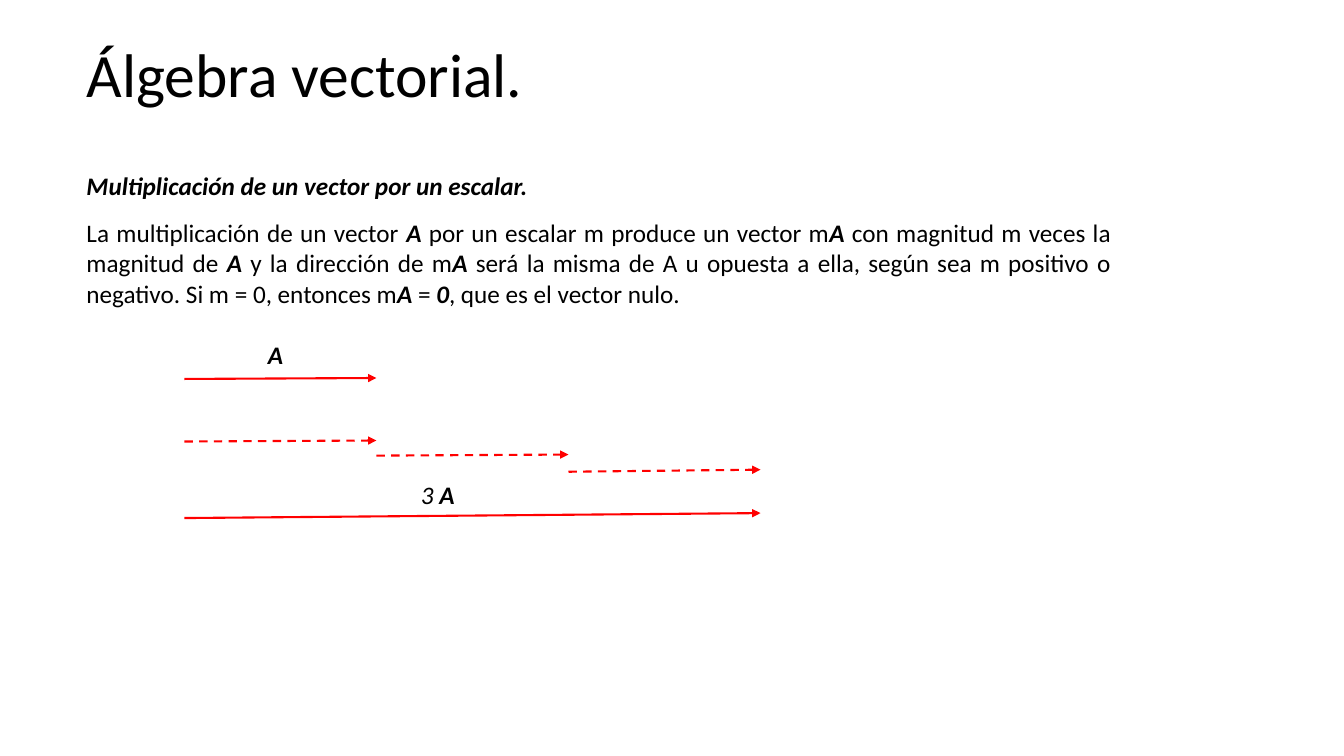
from dataclasses import dataclass
from typing import NamedTuple

from lxml.etree import SubElement
from pptx import Presentation
from pptx.dml.color import RGBColor
from pptx.enum.dml import MSO_LINE_DASH_STYLE as Dash
from pptx.enum.shapes import MSO_CONNECTOR as Connector
from pptx.enum.text import MSO_ANCHOR as Anchor, MSO_AUTO_SIZE as AutoSize, PP_ALIGN as Align
from pptx.oxml.ns import qn
from pptx.slide import Slide
from pptx.text.text import TextFrame, _Paragraph as Paragraph
from pptx.util import Emu, Inches, Pt

BLACK = RGBColor(0x00, 0x00, 0x00)
RED = RGBColor(0xFF, 0x00, 0x00)
WIDTH, HEIGHT = Inches(13.333), Inches(7.5)

# Lengths are percentages of the slide's width or height.
MARGIN = 5.7
ORIGIN = 13.72
VECTOR = 14.29


class Area(NamedTuple):
    left: float
    top: float
    width: float
    height: float


class Span(NamedTuple):
    text: str
    bold: bool = False
    italic: bool = False


@dataclass(frozen=True)
class Vector:
    """An arrow that starts after some vector lengths and spans others."""
    start: int
    lengths: int
    tail_y: float
    head_y: float
    dashed: bool = False


@dataclass(frozen=True)
class Label:
    area: Area
    spans: list[Span]


def strong(text: str) -> Span:
    return Span(text, bold=True, italic=True)


TITLE_AREA = Area(MARGIN, 5.2, 86.25, 19.33)
BODY_AREA = Area(MARGIN, 21.87, 77.7, 19.73)
BODY = [
    [strong("Multiplicación de un vector por un escalar. ")],
    [
        Span("La multiplicación de un vector "), strong("A"),
        Span(" por un escalar m produce un vector m"), strong("A"),
        Span(" con magnitud m veces la magnitud de "), strong("A "),
        Span("y la dirección de m"), strong("A "),
        Span("será la misma de A u opuesta a ella, según sea m positivo o negativo. "
             "Si m = 0, entonces m"), strong("A"),
        Span(" = "), strong("0"), Span(", que es el vector nulo."),
    ],
]
VECTORS = [
    Vector(0, 1, 50.13, 50.0),
    Vector(0, 1, 58.4, 58.27, dashed=True),
    Vector(1, 1, 60.27, 60.13, dashed=True),
    Vector(2, 1, 62.4, 62.13, dashed=True),
    Vector(0, 3, 68.53, 67.87),
]
LABELS = [
    Label(Area(19.2, 44.27, 3.38, 5.33), [strong("A")]),
    Label(Area(30.15, 62.8, 5.03, 5.33),
          [strong(" "), Span("3 ", italic=True), strong("A")]),
]


def across(share: float) -> Emu:
    return Emu(round(WIDTH * share / 100))


def down(share: float) -> Emu:
    return Emu(round(HEIGHT * share / 100))


def place(area: Area) -> tuple[Emu, Emu, Emu, Emu]:
    return across(area.left), down(area.top), across(area.width), down(area.height)


def write(para: Paragraph, spans: list[Span], size: int = 18) -> None:
    for span in spans:
        run = para.add_run()
        run.text = span.text
        font = run.font
        font.name, font.size = "Calibri", Pt(size)
        font.bold, font.italic = span.bold, span.italic
        font.color.rgb = BLACK


def add_title(page: Slide) -> None:
    title = page.shapes.title
    title.left, title.top, title.width, title.height = place(TITLE_AREA)
    frame = title.text_frame
    frame.word_wrap = True
    frame.auto_size = AutoSize.NONE
    frame.vertical_anchor = Anchor.TOP
    para = frame.paragraphs[0]
    para.alignment = Align.LEFT
    para.line_spacing = 0.9
    write(para, [Span("Álgebra vectorial.")], size=44)


def add_frame(page: Slide, area: Area) -> TextFrame:
    frame = page.shapes.add_textbox(*place(area)).text_frame
    frame.word_wrap = True
    frame.auto_size = AutoSize.SHAPE_TO_FIT_TEXT
    return frame


def add_body(page: Slide) -> None:
    frame = add_frame(page, BODY_AREA)
    for index, spans in enumerate(BODY):
        para = frame.add_paragraph() if index else frame.paragraphs[0]
        para.alignment = Align.JUSTIFY
        para.space_before = para.space_after = Pt(6)
        write(para, spans)


def add_vector(page: Slide, vector: Vector) -> None:
    tail_x = ORIGIN + vector.start * VECTOR
    head_x = tail_x + vector.lengths * VECTOR
    arrow = page.shapes.add_connector(
        Connector.STRAIGHT, across(tail_x), down(vector.tail_y),
        across(head_x), down(vector.head_y))
    arrow.line.color.rgb = RED
    arrow.line.width = Pt(1.5)
    if vector.dashed:
        arrow.line.dash_style = Dash.DASH
    SubElement(arrow.line._get_or_add_ln(), qn("a:tailEnd"), type="triangle")
    SubElement(arrow._element.spPr, qn("a:effectLst"))


def main() -> None:
    deck = Presentation()
    deck.slide_width, deck.slide_height = WIDTH, HEIGHT
    page = deck.slides.add_slide(deck.slide_layouts.get_by_name("Title Only"))
    add_title(page)
    add_body(page)
    for vector in VECTORS:
        add_vector(page, vector)
    for label in LABELS:
        write(add_frame(page, label.area).paragraphs[0], label.spans)
    deck.save("out.pptx")


if __name__ == "__main__":
    main()
